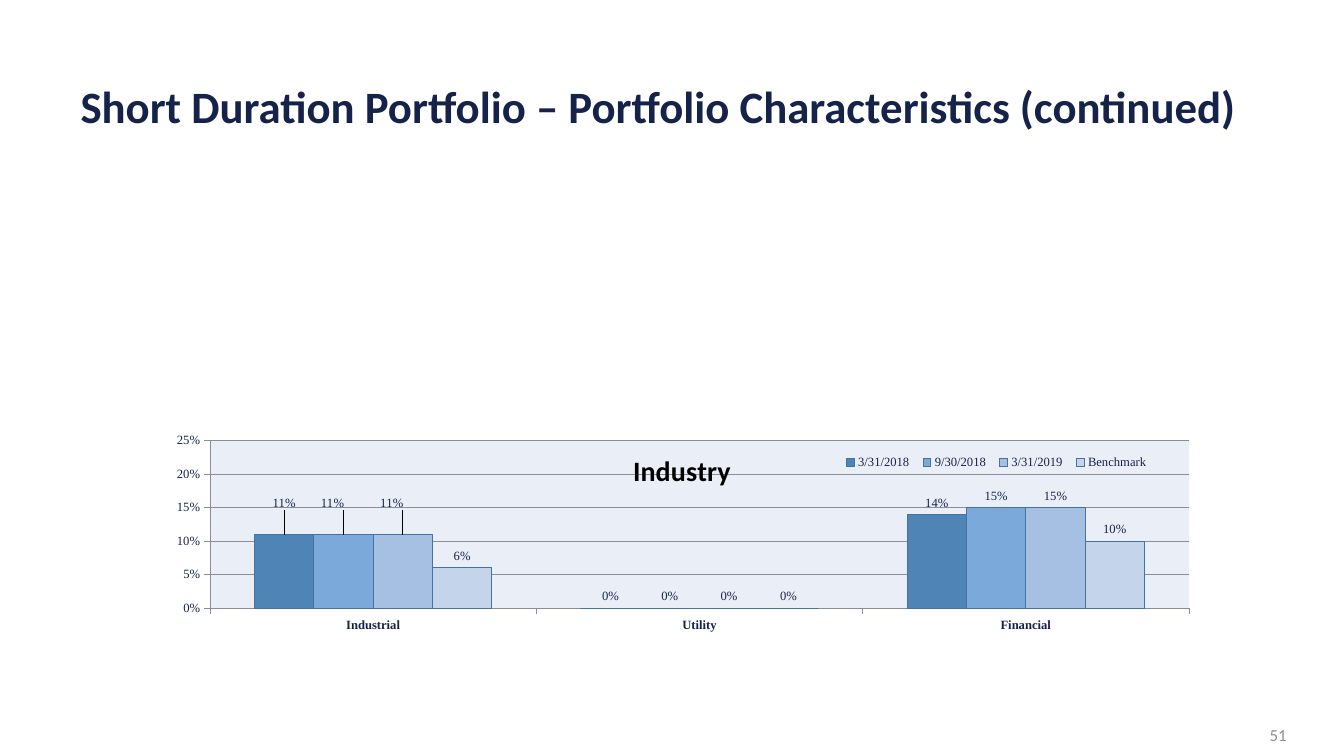
from pptx import Presentation
from pptx.chart.data import CategoryChartData
from pptx.dml.color import RGBColor
from pptx.enum.chart import XL_CHART_TYPE as Kind
from pptx.enum.chart import XL_LABEL_POSITION as Spot
from pptx.enum.chart import XL_LEGEND_POSITION as Side
from pptx.enum.chart import XL_TICK_MARK as Tick
from pptx.enum.text import MSO_ANCHOR as Anchor
from pptx.enum.text import PP_ALIGN as Align
from pptx.oxml import parse_xml
from pptx.oxml.ns import nsdecls, qn
from pptx.util import Inches, Pt

NAVY = RGBColor(0x15, 0x23, 0x4A)
GREY = RGBColor(0x8C, 0x8D, 0x96)
EDGE = RGBColor(0x43, 0x73, 0x9E)
BLACK = RGBColor(0, 0, 0)
WHITE = RGBColor(0xFF, 0xFF, 0xFF)
PALE = RGBColor(0xEA, 0xEF, 0xF7)

SMALL = {"name": "Times New Roman", "size": Pt(9), "bold": False}
HEAD = {"name": "Calibri", "size": Pt(32), "bold": True}
TITLE = {"name": "Calibri", "size": Pt(20), "bold": True}
PAGE = {"name": "Calibri", "size": Pt(12), "bold": False}

CATS = ["Industrial", "Utility", "Financial"]
# name, values, bar colour, shift of the Industrial label
SERIES = [
    ("3/31/2018", (0.11, 0, 0.14), RGBColor(0x4E, 0x85, 0xB6), (0, -0.08)),
    ("9/30/2018", (0.11, 0, 0.15), RGBColor(0x7A, 0xA9, 0xDA), (-0.01, -0.08)),
    ("3/31/2019", (0.11, 0, 0.15), RGBColor(0xA5, 0xC0, 0xE3), (-0.01, -0.08)),
    ("Benchmark", (0.06, 0, 0.10), RGBColor(0xC4, 0xD5, 0xEB), None),
]


def style(font, look, color):
    for key, value in look.items():
        setattr(font, key, value)
    font.color.rgb = color


def stroke(line, color):
    line.color.rgb = color
    line.width = Pt(0.5)


def layout(node, place, inner=False, edge=True):
    """Place a chart part by fractions: x, y and, if given, w, h."""
    for old in node.findall(qn("c:layout")):
        node.remove(old)
    tags = [("layoutTarget", "inner")] if inner else []
    if edge:
        tags += [("xMode", "edge"), ("yMode", "edge")]
    tags += zip("xywh", place)
    body = "".join(f'<c:{tag} val="{value}"/>' for tag, value in tags)
    part = parse_xml(f'<c:layout {nsdecls("c")}><c:manualLayout>{body}'
                     "</c:manualLayout></c:layout>")
    lead = [kid for kid in node
            if kid.tag in (qn("c:idx"), qn("c:tx"), qn("c:legendPos"))]
    node.insert(node.index(lead[-1]) + 1 if lead else 0, part)


def backing(color):
    return parse_xml(f'<c:spPr {nsdecls("c", "a")}><a:solidFill>'
                     f'<a:srgbClr val="{color}"/></a:solidFill>'
                     "<a:ln><a:noFill/></a:ln></c:spPr>")


def add_text(slide, box, text, look, color, align, space=1.0):
    frame = slide.shapes.add_textbox(*map(Inches, box)).text_frame
    frame.word_wrap = True
    frame.vertical_anchor = Anchor.MIDDLE
    para = frame.paragraphs[0]
    para.text = text
    para.alignment = align
    para.line_spacing = space
    style(para.runs[0].font, look, color)


def set_axes(chart):
    cat, val = chart.category_axis, chart.value_axis
    for axis in (cat, val):
        axis.major_tick_mark = Tick.OUTSIDE
        axis.minor_tick_mark = Tick.NONE
        stroke(axis.format.line, GREY)
        style(axis.tick_labels.font, {**SMALL, "bold": axis is cat}, NAVY)
    for key, value in {"minimum_scale": 0, "maximum_scale": 0.25,
                       "major_unit": 0.05, "has_major_gridlines": True}.items():
        setattr(val, key, value)
    stroke(val.major_gridlines.format.line, GREY)
    val.tick_labels.number_format = "0%"
    val.tick_labels.number_format_is_linked = False


def set_bars(plot):
    plot.gap_width = 150
    plot.overlap = 0
    plot.vary_by_categories = False
    for bars, (_, _, color, shift) in zip(plot.series, SERIES):
        bars.format.fill.solid()
        bars.format.fill.fore_color.rgb = color
        stroke(bars.format.line, EDGE)
        labels = bars.data_labels
        for key, value in {"show_value": True, "number_format": "0%",
                           "number_format_is_linked": False,
                           "position": Spot.OUTSIDE_END}.items():
            setattr(labels, key, value)
        style(labels.font, SMALL, NAVY)
        if shift:
            label = bars.points[0].data_label
            style(label.font, SMALL, NAVY)
            label.position = Spot.OUTSIDE_END
            layout(bars._element.find(".//" + qn("c:dLbl")), shift, edge=False)


def add_graph(slide, box):
    data = CategoryChartData(number_format="0%")
    data.categories = CATS
    for name, values, _, _ in SERIES:
        data.add_series(name, values)
    chart = slide.shapes.add_chart(
        Kind.COLUMN_CLUSTERED, *map(Inches, box), data).chart
    style(chart.font, SMALL, NAVY)
    set_axes(chart)
    set_bars(chart.plots[0])
    root = chart._chartSpace

    words = chart.chart_title.text_frame
    words.text = "Industry"
    style(words.paragraphs[0].runs[0].font, TITLE, BLACK)
    title = root.find(".//" + qn("c:title"))
    title.find(qn("c:overlay")).set("val", "1")
    layout(title, (0.46, 0.07))

    chart.has_legend = True
    legend = chart.legend
    legend.position = Side.TOP
    legend.include_in_layout = False
    style(legend.font, SMALL, NAVY)
    layout(root.find(".//" + qn("c:legend")), (0.65, 0.09, 0.29, 0.1))

    area = root.find(".//" + qn("c:plotArea"))
    layout(area, (0.08, 0.05, 0.89, 0.69), inner=True)
    area.append(backing(PALE))
    root.find(qn("c:chart")).addnext(backing(WHITE))


def main():
    deck = Presentation()
    deck.slide_width, deck.slide_height = Inches(13.33), Inches(7.5)
    slide = deck.slides.add_slide(deck.slide_layouts[6])
    add_text(slide, (0.7, 0.83, 11.92, 0.5),
             "Short Duration Portfolio – Portfolio Characteristics (continued)",
             HEAD, NAVY, Align.LEFT, 0.9)
    add_graph(slide, (1.21, 4.25, 10.91, 2.41))
    add_text(slide, (9.86, 7.09, 3, 0.4), "51", PAGE, GREY, Align.RIGHT)
    deck.save("out.pptx")


if __name__ == "__main__":
    main()
